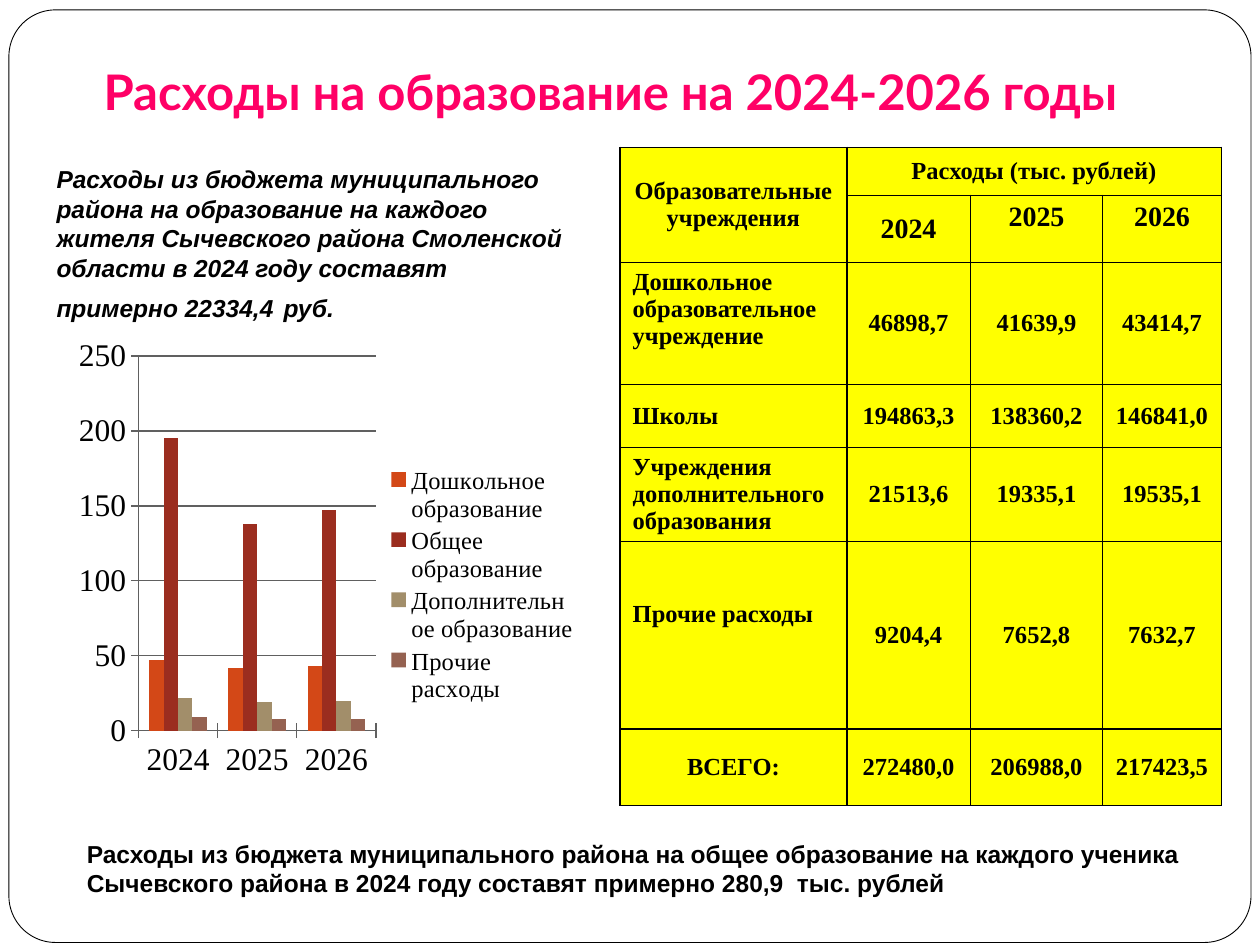
from lxml import etree
from pptx import Presentation
from pptx.chart.data import CategoryChartData
from pptx.dml.color import RGBColor
from pptx.enum.chart import XL_CHART_TYPE, XL_LEGEND_POSITION, XL_TICK_MARK
from pptx.enum.shapes import MSO_SHAPE
from pptx.enum.text import MSO_ANCHOR, PP_ALIGN
from pptx.oxml import parse_xml
from pptx.oxml.ns import nsdecls, qn
from pptx.util import Cm, Pt

BLACK = RGBColor(0x00, 0x00, 0x00)
WHITE = RGBColor(0xFF, 0xFF, 0xFF)
GRAY = RGBColor(0x60, 0x60, 0x60)
PINK = RGBColor(0xFF, 0x00, 0x66)
YELLOW = RGBColor(0xFF, 0xFF, 0x00)
SERIF = "Times New Roman"

YEARS = ["2024", "2025", "2026"]
SERIES = [
    ("Дошкольное образование", (47, 42, 43), RGBColor(0xD3, 0x48, 0x17)),
    ("Общее образование", (195, 138, 147), RGBColor(0x9B, 0x2D, 0x1F)),
    ("Дополнительное образование", (22, 19, 20), RGBColor(0xA2, 0x8E, 0x6A)),
    ("Прочие расходы", (9, 8, 8), RGBColor(0x95, 0x62, 0x51)),
]
COL_WIDTHS = [4.57, 2.49, 2.67, 2.39]
ROW_HEIGHTS = [0.97, 1.35, 2.46, 1.27, 1.89, 3.78, 1.55]
ROWS = [
    ["Образовательные учреждения", "Расходы (тыс. рублей)", "", ""],
    [""] + YEARS,
    ["Дошкольное образовательное учреждение", "46898,7", "41639,9", "43414,7"],
    ["Школы", "194863,3", "138360,2", "146841,0"],
    ["Учреждения\nдополнительного\nобразования", "21513,6", "19335,1", "19535,1"],
    ["Прочие расходы", "9204,4", "7652,8", "7632,7"],
    ["ВСЕГО:", "272480,0", "206988,0", "217423,5"],
]
TOP_CELLS = {(1, 2), (1, 3), (2, 0), (5, 0)}


def style_font(font, name, size, color=BLACK, bold=True, italic=False):
    font.name, font.size = name, Pt(size)
    font.bold, font.italic = bold, italic
    font.color.rgb = color


def place(sp, left, top, width, height):
    sp.left, sp.top, sp.width, sp.height = Cm(left), Cm(top), Cm(width), Cm(height)


def add_frame(slide):
    sp = slide.shapes.add_shape(MSO_SHAPE.ROUNDED_RECTANGLE, Cm(0.18), Cm(0.2),
                                Cm(25.04), Cm(18.8))
    sp.adjustments[0] = 0.05
    sp.shadow.inherit = False
    sp.fill.solid()
    sp.fill.fore_color.rgb = WHITE
    sp.line.color.rgb = BLACK
    sp.line.width = Pt(0.5)
    slide.shapes._spTree.insert(2, sp._element)  # behind the title


def set_title(slide, text):
    title = slide.shapes.title
    place(title, 0, 0.71, 24.61, 1.96)
    tf = title.text_frame
    tf.text = text
    tf.vertical_anchor = MSO_ANCHOR.BOTTOM
    tf.margin_bottom = Cm(0.25)
    p = tf.paragraphs[0]
    p.alignment = PP_ALIGN.CENTER
    style_font(p.runs[0].font, "Lato", 28, PINK)


def add_note(slide, box, parts, italic=False):
    """Add a text box whose parts are (text, size) pairs."""
    sp = slide.shapes.add_textbox(*(Cm(v) for v in box))
    tf = sp.text_frame
    tf.word_wrap = True
    tf.vertical_anchor = MSO_ANCHOR.MIDDLE
    for text, size in parts:
        r = tf.paragraphs[0].add_run()
        r.text = text
        style_font(r.font, "Arial", size, italic=italic)


def add_borders(cell):
    tcPr = cell._tc.get_or_add_tcPr()
    for i, side in enumerate(("lnL", "lnR", "lnT", "lnB")):
        tcPr.insert(i, parse_xml(
            f'<a:{side} {nsdecls("a")} w="12700"><a:solidFill>'
            f'<a:srgbClr val="{BLACK}"/></a:solidFill></a:{side}>'))


def format_cell(cell, row, col):
    cell.fill.solid()
    cell.fill.fore_color.rgb = YELLOW
    add_borders(cell)
    cell.vertical_anchor = MSO_ANCHOR.TOP if (row, col) in TOP_CELLS else MSO_ANCHOR.MIDDLE
    is_label = col == 0 and 2 <= row <= 5
    for p in cell.text_frame.paragraphs:
        p.alignment = PP_ALIGN.JUSTIFY if is_label else PP_ALIGN.CENTER
        for r in p.runs:
            style_font(r.font, SERIF, 16 if row == 1 else 14)


def add_expense_table(slide):
    table = slide.shapes.add_table(len(ROWS), len(COL_WIDTHS), Cm(12.5), Cm(2.97),
                                   Cm(sum(COL_WIDTHS)), Cm(sum(ROW_HEIGHTS))).table
    for column, width in zip(table.columns, COL_WIDTHS):
        column.width = Cm(width)
    for row, height in zip(table.rows, ROW_HEIGHTS):
        row.height = Cm(height)
    for i, texts in enumerate(ROWS):
        for j, text in enumerate(texts):
            table.cell(i, j).text = text
            format_cell(table.cell(i, j), i, j)
    table.cell(0, 0).merge(table.cell(1, 0))
    table.cell(0, 1).merge(table.cell(0, 3))
    table.cell(5, 0).margin_top = Cm(1.2)


def set_plot_area(chart, x, y, w, h):
    """Fix the inner plot area, in fractions of the chart."""
    plot_area = chart._chartSpace.chart.plotArea
    for old in plot_area.findall(qn("c:layout")):
        plot_area.remove(old)
    layout = etree.Element(qn("c:layout"))
    manual = etree.SubElement(layout, qn("c:manualLayout"))
    settings = [("layoutTarget", "inner"), ("xMode", "edge"), ("yMode", "edge"),
                ("x", x), ("y", y), ("w", w), ("h", h)]
    for tag, value in settings:
        etree.SubElement(manual, qn(f"c:{tag}")).set("val", str(value))
    plot_area.insert(0, layout)


def add_expense_chart(slide):
    data = CategoryChartData()
    data.categories = YEARS
    for name, values, _ in SERIES:
        data.add_series(name, values)
    chart = slide.shapes.add_chart(XL_CHART_TYPE.COLUMN_CLUSTERED, Cm(0.79), Cm(6.55),
                                   Cm(11.13), Cm(10.49), data).chart
    style_font(chart.font, SERIF, 18, bold=False)
    chart.has_title = False
    chart.has_legend = True
    chart.legend.position = XL_LEGEND_POSITION.RIGHT
    chart.legend.include_in_layout = False
    style_font(chart.legend.font, SERIF, 14, bold=False)
    for axis in (chart.category_axis, chart.value_axis):
        axis.major_tick_mark = XL_TICK_MARK.CROSS
        axis.format.line.color.rgb = GRAY
    axis = chart.value_axis
    axis.minimum_scale, axis.maximum_scale, axis.major_unit = 0, 250, 50
    axis.has_major_gridlines = True
    axis.major_gridlines.format.line.color.rgb = GRAY
    plot = chart.plots[0]
    plot.gap_width, plot.overlap = 150, 0
    plot.vary_by_categories = False
    for series, (_, _, color) in zip(plot.series, SERIES):
        series.format.fill.solid()
        series.format.fill.fore_color.rgb = color
    set_plot_area(chart, 0.18, 0.06, 0.43, 0.72)


def main():
    prs = Presentation()
    prs.slide_width, prs.slide_height = Cm(25.4), Cm(19.05)
    slide = prs.slides.add_slide(prs.slide_layouts[5])
    add_frame(slide)
    set_title(slide, "Расходы на образование на 2024-2026 годы")
    add_expense_table(slide)
    # Notes per resident and per pupil
    add_note(slide, (0.89, 3.12, 10.8, 3.61), [
        ("Расходы из бюджета муниципального района на образование на каждого "
         "жителя Сычевского района Смоленской области в 2024 году составят "
         "примерно 22334,4", 14), (" ", 20), ("руб.", 14)], italic=True)
    add_note(slide, (1.5, 16.92, 22.86, 1.17), [
        ("Расходы из бюджета муниципального района на общее образование на "
         "каждого ученика Сычевского района в 2024 году составят примерно "
         "280,9  тыс. рублей", 14)])
    add_expense_chart(slide)
    prs.save("out.pptx")


if __name__ == "__main__":
    main()
